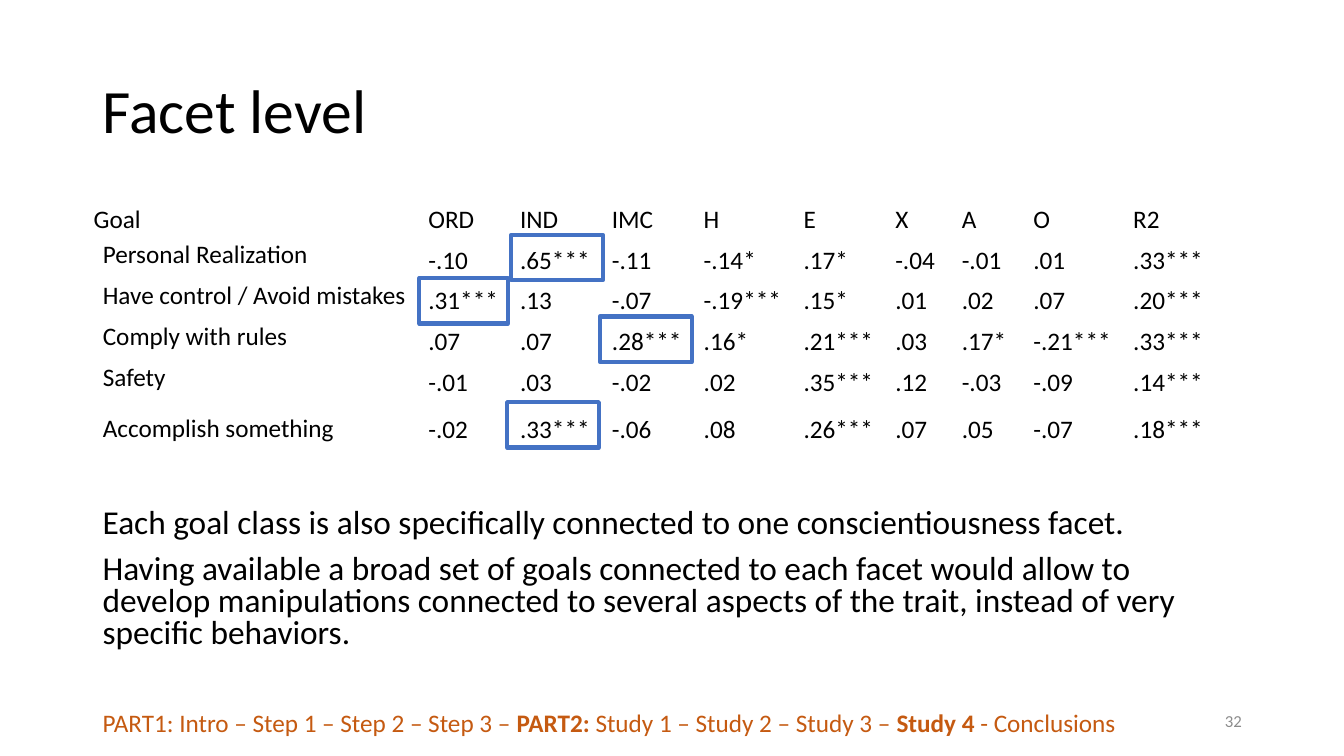
"""Build the "Facet level" slide with its table of goals and facets."""
from dataclasses import dataclass

from pptx import Presentation
from pptx.dml.color import RGBColor
from pptx.enum.shapes import MSO_SHAPE
from pptx.enum.text import MSO_ANCHOR, PP_ALIGN
from pptx.slide import Slide
from pptx.util import Inches, Length, Pt

WIDE, HIGH = Inches(13.33), Inches(7.5)
FACE = "Calibri"
BLACK = RGBColor(0x00, 0x00, 0x00)
GREY = RGBColor(0x8C, 0x8C, 0x8C)
RUST = RGBColor(0xC5, 0x5A, 0x11)
BLUE = RGBColor(0x44, 0x72, 0xC4)
EDGE = 6.9


def across(share: float) -> Length:
    """Turn a percentage of the slide's width into a length."""
    return Length(round(WIDE * share / 100))


def down(share: float) -> Length:
    """Turn a percentage of the slide's height into a length."""
    return Length(round(HIGH * share / 100))


@dataclass(frozen=True)
class Box:
    """A place on the slide, in percent of its width and height."""
    left: float
    top: float
    wide: float
    high: float

    def place(self) -> tuple[Length, Length, Length, Length]:
        """Return left, top, width and height as lengths."""
        return across(self.left), down(self.top), across(self.wide), down(self.high)


@dataclass(frozen=True)
class Note:
    """A text box; each paragraph is a list of runs, every second one bold."""
    box: Box
    lines: list[list[str]]
    size: float
    color: RGBColor = BLACK
    anchor: MSO_ANCHOR = MSO_ANCHOR.TOP
    align: PP_ALIGN = PP_ALIGN.LEFT
    pitch: float = 1.0
    before: float = 0


NOTES = [
    Note(Box(EDGE, 5.33, 86.25, 19.33), [["Facet level"]], 44,
         anchor=MSO_ANCHOR.MIDDLE, pitch=0.9),
    Note(Box(70.65, 92.67, 22.5, 5.33), [["32"]], 12, GREY,
         MSO_ANCHOR.MIDDLE, PP_ALIGN.RIGHT),
    Note(Box(EDGE, 66.67, 82.35, 23.33), [
        ["Each goal class is also specifically connected to one "
         "conscientiousness facet."],
        ["Having available a broad set of goals connected to each facet would "
         "allow to develop manipulations connected to several aspects of the "
         "trait, instead of very specific behaviors."],
    ], 23.8, pitch=0.8, before=10),
    Note(Box(EDGE, 92.93, 88.3, 5.33), [
        ["PART1: Intro – Step 1 – Step 2 – Step 3 – ", "PART2: ",
         "Study 1 – Study 2 – Study 3 – ", "Study 4", " - Conclusions"],
    ], 18, RUST),
]

GRID = Box(EDGE, 26.67, 86.25, 33.87)
COLS = [24.9, 6.83, 6.83, 6.83, 7.43, 6.83, 4.95, 5.33, 7.43, 9.08]
ROWS = [4.4] * 5 + [8.13]
DATA = [
    ("Goal", "ORD IND IMC H E X A O R2"),
    ("Personal Realization", "-.10 .65*** -.11 -.14* .17* -.04 -.01 .01 .33***"),
    ("Have control / Avoid mistakes",
     ".31*** .13 -.07 -.19*** .15* .01 .02 .07 .20***"),
    ("Comply with rules", ".07 .07 .28*** .16* .21*** .03 .17* -.21*** .33***"),
    ("Safety", "-.01 .03 -.02 .02 .35*** .12 -.03 -.09 .14***"),
    ("Accomplish something", "-.02 .33*** -.06 .08 .26*** .07 .05 -.07 .18***"),
]
MARKS = [
    Box(38.03, 31.07, 6.83, 6),
    Box(31.2, 36.8, 6.6, 6),
    Box(44.64, 41.87, 6.83, 6),
    Box(37.73, 53.2, 6.83, 6),
]


def style(para, size: float, color: RGBColor) -> None:
    """Set the font of a paragraph."""
    para.font.name = FACE
    para.font.size = Pt(size)
    para.font.color.rgb = color


def write(slide: Slide, note: Note) -> None:
    """Draw one text box."""
    frame = slide.shapes.add_textbox(*note.box.place()).text_frame
    frame.word_wrap = True
    frame.vertical_anchor = note.anchor
    for row, line in enumerate(note.lines):
        para = frame.add_paragraph() if row else frame.paragraphs[0]
        para.alignment = note.align
        para.line_spacing = note.pitch
        para.space_before = Pt(note.before)
        style(para, note.size, note.color)
        for turn, text in enumerate(line):
            run = para.add_run()
            run.text = text
            if turn % 2:
                run.font.bold = True


def fill(cell, text: str, label: bool, anchor: MSO_ANCHOR) -> None:
    """Write one table cell; labels keep the wide margins."""
    cell.fill.background()
    cell.text = text
    cell.vertical_anchor = anchor
    side, head, foot = (0.1, 0.05, 0.05) if label else (0.01, 0.01, 0)
    cell.margin_left = cell.margin_right = Inches(side)
    cell.margin_top, cell.margin_bottom = Inches(head), Inches(foot)
    style(cell.text_frame.paragraphs[0], 18, BLACK)


def chart(slide: Slide) -> None:
    """Draw the table of goals and facets."""
    table = slide.shapes.add_table(len(ROWS), len(COLS), *GRID.place()).table
    table.first_row = table.horz_banding = False
    for col, share in zip(table.columns, COLS):
        col.width = across(share)
    for row, share in zip(table.rows, ROWS):
        row.height = down(share)
    last = len(DATA) - 1
    for i, (goal, stats) in enumerate(DATA):
        for j, text in enumerate([goal, *stats.split()]):
            label = i > 0 and j == 0
            anchor = MSO_ANCHOR.TOP if label else MSO_ANCHOR.BOTTOM
            fill(table.cell(i, j), text, label,
                 MSO_ANCHOR.MIDDLE if i == last else anchor)


def mark(slide: Slide, box: Box) -> None:
    """Frame one value of the table."""
    shape = slide.shapes.add_shape(MSO_SHAPE.RECTANGLE, *box.place())
    shape.shadow.inherit = False
    shape.fill.background()
    shape.line.color.rgb = BLUE
    shape.line.width = Pt(3)


def main() -> None:
    """Build and save the slide."""
    deck = Presentation()
    deck.slide_width, deck.slide_height = WIDE, HIGH
    slide = deck.slides.add_slide(deck.slide_layouts[6])
    chart(slide)
    for note in NOTES:
        write(slide, note)
    for box in MARKS:
        mark(slide, box)
    deck.save("out.pptx")


if __name__ == "__main__":
    main()
